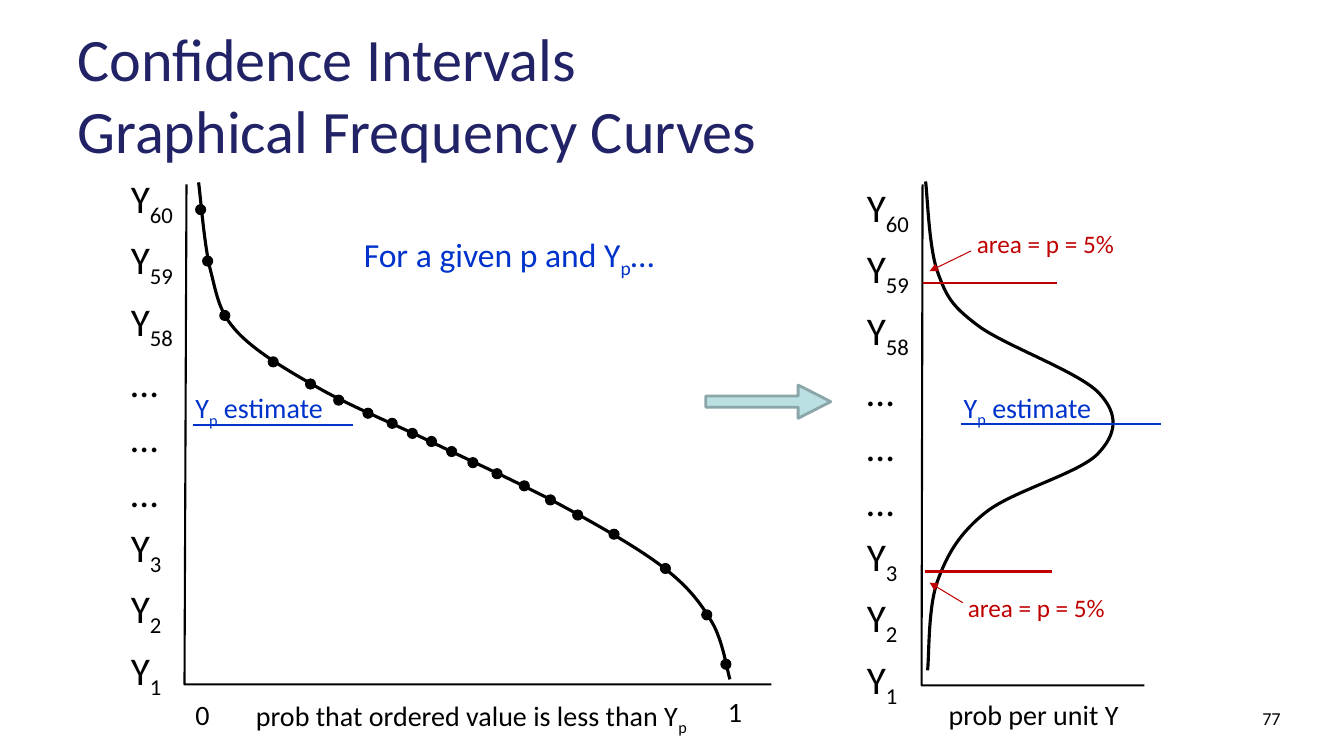
from dataclasses import dataclass
from typing import NamedTuple

from lxml.etree import SubElement
from pptx import Presentation
from pptx.dml.color import RGBColor
from pptx.enum.shapes import MSO_CONNECTOR, MSO_SHAPE
from pptx.enum.text import MSO_ANCHOR, PP_ALIGN
from pptx.oxml.ns import qn
from pptx.shapes.autoshape import Shape
from pptx.slide import Slide
from pptx.util import Inches, Pt

Point = tuple[float, float]


@dataclass(frozen=True)
class Theme:
    font: str = "Calibri"
    black: str = "000000"
    navy: str = "222267"
    blue: str = "0033CC"
    red: str = "C00000"
    teal: str = "BBE0E3"
    slate: str = "8AA6A8"
    title: float = 43
    rank: float = 28
    lead: float = 24
    label: float = 20
    note: float = 18
    folio: float = 13
    thin: float = 0.75
    rule: float = 1.5
    edge: float = 2
    curve: float = 2.25


class Label(NamedTuple):
    text: str
    left: float
    top: float
    width: float
    height: float
    size: float
    color: str
    align: PP_ALIGN = PP_ALIGN.LEFT
    anchor: MSO_ANCHOR = MSO_ANCHOR.TOP
    gap: float = 0
    hang: float = 0


class Rule(NamedTuple):
    start: Point
    end: Point
    color: str
    weight: float
    arrow: bool = False


class Trace(NamedTuple):
    knots: list[Point]
    weight: float
    smooth: bool


THEME = Theme()
WIDTH, HEIGHT = Inches(13.33), Inches(7.5)
COLS, ROWS = 13.33, 7.5
DOT = 0.1
RANKS = "Y_60\nY_59\nY_58\n…\n…\n…\nY_3\nY_2\nY_1"

LABELS = [
    Label("Confidence Intervals \vGraphical Frequency Curves", 0.67, 0.3, 11, 1.25,
          THEME.title, THEME.navy, anchor=MSO_ANCHOR.MIDDLE),
    *(Label(RANKS, left, top, 0.84, 5.58, THEME.rank, THEME.black,
            gap=THEME.rank / 5, hang=0.37)
      for left, top in [(1.2, 1.68), (8.5, 1.77)]),
    Label("prob that ordered value is less than Y_p", 2.44, 6.88, 4.56, 0.44,
          THEME.label, THEME.black),
    Label("0", 1.84, 6.87, 0.37, 0.44, THEME.label, THEME.black),
    Label("1", 7.12, 6.84, 0.37, 0.44, THEME.label, THEME.black),
    Label("prob per unit Y", 9.31, 6.87, 2.04, 0.44, THEME.label, THEME.black),
    Label("For a given p and Y_p_…", 3.51, 2.27, 3.12, 0.5, THEME.lead, THEME.blue),
    *(Label("area = p = 5%", left, top, 1.59, 0.4, THEME.note, THEME.red)
      for left, top in [(9.59, 2.22), (9.5, 5.83)]),
    *(Label("Y_p_ estimate", left, top, 1.77, 0.44, THEME.label, THEME.blue)
      for left, top in [(9.46, 3.82), (1.84, 3.83)]),
    Label("77", 10.47, 6.97, 2.33, 0.52, THEME.folio, THEME.black, PP_ALIGN.RIGHT),
]

TRACES = [
    Trace([(1.85, 1.83), (1.83, 6.79), (7.65, 6.79)], THEME.rule, False),
    Trace([(1.97, 1.81), (2.09, 2.69), (2.35, 3.29), (3.16, 3.85), (4.31, 4.4),
           (5.56, 5.01), (6.58, 5.63), (7.06, 6.17), (7.24, 6.74)], THEME.curve, True),
    Trace([(9.15, 1.83), (9.14, 6.8), (11.35, 6.8)], THEME.rule, False),
    Trace([(9.18, 1.8), (9.3, 2.7), (9.7, 3.23), (10.9, 3.9), (10.89, 4.5),
           (9.78, 5.08), (9.3, 5.76), (9.2, 6.65)], THEME.curve, True),
]

DOTS = [
    (1.94, 2.03), (2.01, 2.54), (2.18, 3.08), (2.66, 3.54), (3.03, 3.76),
    (3.31, 3.92), (3.6, 4.05), (3.84, 4.15), (4.04, 4.25), (4.23, 4.33),
    (4.43, 4.43), (4.64, 4.54), (4.88, 4.65), (5.15, 4.77), (5.41, 4.91),
    (5.68, 5.06), (6.04, 5.25), (6.55, 5.59), (6.96, 6.05), (7.15, 6.54),
]

RULES = [
    Rule((9.15, 2.81), (10.48, 2.81), THEME.red, THEME.rule),
    Rule((9.17, 5.67), (10.43, 5.67), THEME.red, THEME.rule),
    Rule((9.63, 2.49), (9.22, 2.69), THEME.red, THEME.thin, True),
    Rule((9.55, 5.98), (9.22, 5.78), THEME.red, THEME.thin, True),
    Rule((9.53, 4.21), (11.52, 4.21), THEME.blue, THEME.rule),
    Rule((1.91, 4.22), (3.5, 4.22), THEME.blue, THEME.rule),
]


def col(count: float) -> int:
    return round(WIDTH * count / COLS)


def row(count: float) -> int:
    return round(HEIGHT * count / ROWS)


def add_pulls(knots: list[Point]) -> list[Point]:
    ends = [knots[0], *knots, knots[-1]]
    points = [knots[0]]
    for (ax, ay), (bx, by), (cx, cy), (dx, dy) in zip(ends, ends[1:], ends[2:], ends[3:]):
        points += [(bx + (cx - ax) / 6, by + (cy - ay) / 6),
                   (cx - (dx - bx) / 6, cy - (dy - by) / 6), (cx, cy)]
    return points


def bend(shape: Shape) -> None:
    track = shape._element.find(".//" + qn("a:path"))
    legs = track.findall(qn("a:lnTo"))
    for trio in zip(legs[::3], legs[1::3], legs[2::3]):
        curve = SubElement(track, qn("a:cubicBezTo"))
        for leg in trio:
            curve.append(leg[0])
            track.remove(leg)


def draw_label(slide: Slide, label: Label) -> None:
    box = slide.shapes.add_textbox(
        col(label.left), row(label.top), col(label.width), row(label.height))
    frame = box.text_frame
    frame.word_wrap = True
    frame.vertical_anchor = label.anchor
    frame.text = label.text
    for para in frame.paragraphs:
        parts = para.text.split("_")
        para.text = parts[0]
        para.alignment = label.align
        para.space_before = Pt(label.gap)
        if label.hang:
            props = para._p.get_or_add_pPr()
            props.set("marL", str(col(label.hang)))
            props.set("indent", str(-col(label.hang)))
        for part in parts[1:]:
            para.add_run().text = part
        for index, run in enumerate(para.runs):
            run.font.name = THEME.font
            run.font.size = Pt(label.size)
            run.font.color.rgb = RGBColor.from_string(label.color)
            if len(parts) > 1 and index % 2:
                run.font._element.set("baseline", "-25000")


def draw_trace(slide: Slide, trace: Trace) -> None:
    knots = add_pulls(trace.knots) if trace.smooth else trace.knots
    points = [(col(x), row(y)) for x, y in knots]
    pen = slide.shapes.build_freeform(*points[0])
    pen.add_line_segments(points[1:], close=False)
    shape = pen.convert_to_shape()
    if trace.smooth:
        bend(shape)
    shape.shadow.inherit = False
    shape.fill.background()
    shape.line.color.rgb = RGBColor.from_string(THEME.black)
    shape.line.width = Pt(trace.weight)


def draw_shape(slide: Slide, kind: MSO_SHAPE, place: Point, size: Point,
               fill: str, line: str, weight: float) -> Shape:
    shape = slide.shapes.add_shape(
        kind, col(place[0]), row(place[1]), col(size[0]), row(size[1]))
    shape.shadow.inherit = False
    shape.fill.solid()
    shape.fill.fore_color.rgb = RGBColor.from_string(fill)
    shape.line.color.rgb = RGBColor.from_string(line)
    shape.line.width = Pt(weight)
    return shape


def draw_rule(slide: Slide, rule: Rule) -> None:
    (left, top), (right, base) = rule.start, rule.end
    link = slide.shapes.add_connector(
        MSO_CONNECTOR.STRAIGHT, col(left), row(top), col(right), row(base))
    link.line.color.rgb = RGBColor.from_string(rule.color)
    link.line.width = Pt(rule.weight)
    if rule.arrow:
        SubElement(link.get_or_add_ln(), qn("a:tailEnd"), type="triangle")
    SubElement(link._element.spPr, qn("a:effectLst"))


def main() -> None:
    deck = Presentation()
    deck.slide_width, deck.slide_height = WIDTH, HEIGHT
    slide = deck.slides.add_slide(deck.slide_layouts[6])
    for trace in TRACES:
        draw_trace(slide, trace)
    for dot in DOTS:
        draw_shape(slide, MSO_SHAPE.OVAL, dot, (DOT, DOT),
                   THEME.black, THEME.black, THEME.thin)
    for rule in RULES:
        draw_rule(slide, rule)
    for label in LABELS:
        draw_label(slide, label)
    arrow = draw_shape(slide, MSO_SHAPE.RIGHT_ARROW, (7, 3.82), (1.24, 0.33),
                       THEME.teal, THEME.slate, THEME.edge)
    arrow.adjustments[0], arrow.adjustments[1] = 0.34, 0.98
    deck.save("out.pptx")


if __name__ == "__main__":
    main()
